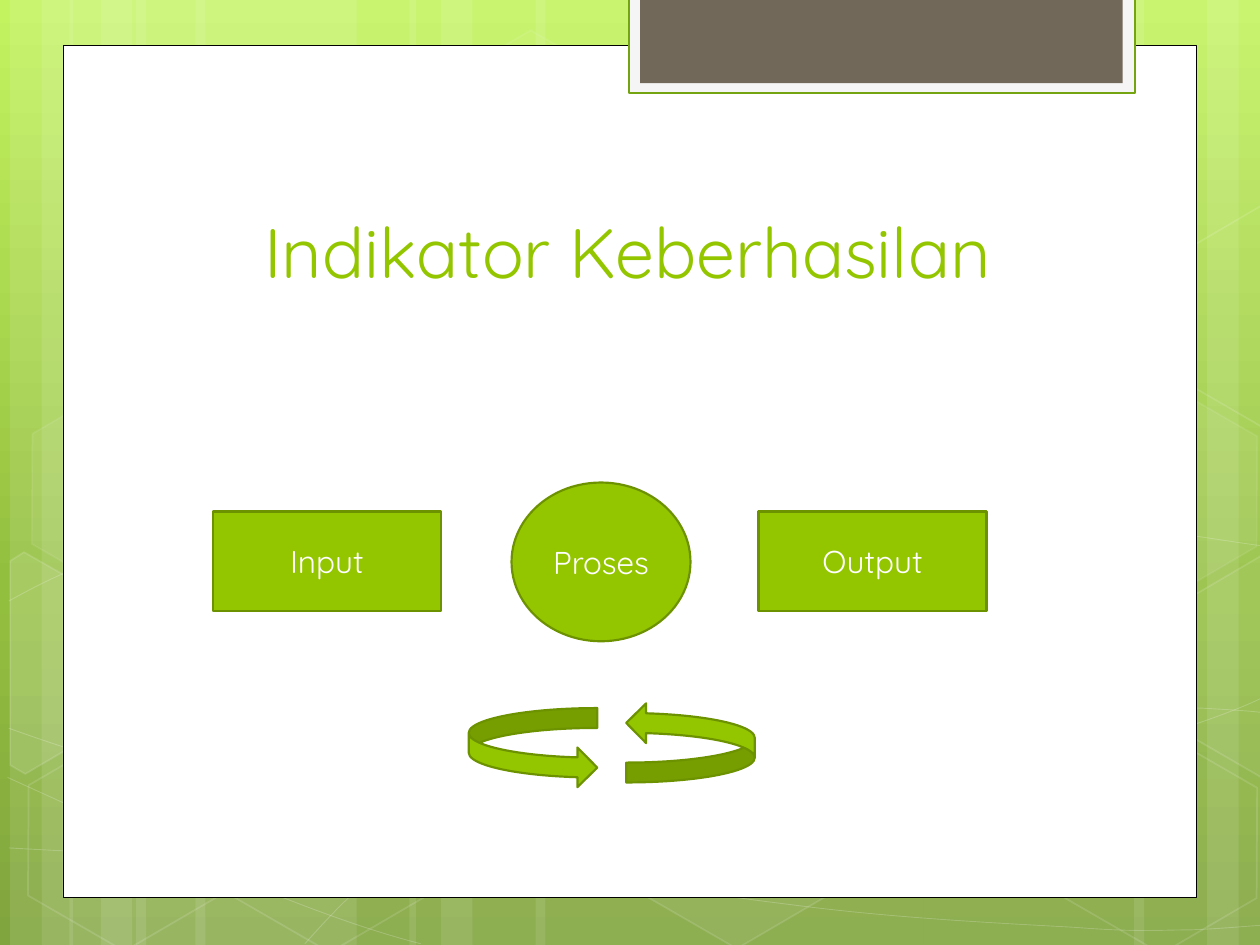
from copy import deepcopy
from dataclasses import dataclass
from math import cos, radians, sin

from lxml.etree import SubElement
from pptx import Presentation
from pptx.dml.color import RGBColor
from pptx.enum.shapes import MSO_SHAPE
from pptx.enum.text import MSO_ANCHOR, PP_ALIGN
from pptx.oxml.ns import qn
from pptx.util import Inches, Pt

COLUMNS, ROWS = 10, 7.5
FONT = "Quicksand"
WHITE, GREEN, DARK_GREEN = "FFFFFF", "94C600", "6D9200"
TILT = 30

Point = tuple[float, float]


@dataclass
class Paint:
    """Fill and outline; opacities are percentages."""
    fill: str | None = None
    fill_opacity: int = 100
    line: str | None = None
    line_width: float = 1
    line_opacity: int = 100


@dataclass
class Figure:
    """A preset shape placed in grid columns and rows."""
    kind: MSO_SHAPE
    left: float
    top: float
    width: float
    height: float
    paint: Paint
    text: str = ""
    rotation: float = 0
    adjustments: tuple[float, ...] = ()


@dataclass
class Curve:
    """A start and three points per cubic; the knot at line_end ends a straight part."""
    knots: list[Point]
    line_end: int = 0


@dataclass
class CutHexagon:
    """A tilted hexagon clipped by the slide's edge, with corners as they appear."""
    center: Point
    corners: list[Point]
    paint: Paint


deck = Presentation()
deck.slide_width, deck.slide_height = Inches(10), Inches(7.5)
page = deck.slides.add_slide(deck.slide_layouts[5])


def column(count: float) -> int:
    return round(deck.slide_width * count / COLUMNS)


def row(count: float) -> int:
    return round(deck.slide_height * count / ROWS)


def set_colour(fill, colour: str, opacity: int = 100) -> None:
    fill.solid()
    fill.fore_color.rgb = RGBColor.from_string(colour)
    if opacity < 100:
        element = fill._xPr.find(qn("a:solidFill"))[0]
        SubElement(element, qn("a:alpha"), val=str(opacity * 1000))


def apply_paint(shape, paint: Paint) -> None:
    shape.shadow.inherit = False
    if paint.fill:
        set_colour(shape.fill, paint.fill, paint.fill_opacity)
    else:
        shape.fill.background()
    if paint.line:
        shape.line.width = Pt(paint.line_width)
        set_colour(shape.line.fill, paint.line, paint.line_opacity)
    else:
        shape.line.fill.background()


def write(shape, text: str, size: float, colour: str, anchor: MSO_ANCHOR) -> None:
    frame = shape.text_frame
    frame.text = text
    frame.word_wrap = True
    frame.vertical_anchor = anchor
    para = frame.paragraphs[0]
    para.alignment = PP_ALIGN.CENTER
    font = para.runs[0].font
    font.name, font.size = FONT, Pt(size)
    font.color.rgb = RGBColor.from_string(colour)


def draw_figure(figure: Figure) -> None:
    shape = page.shapes.add_shape(
        figure.kind, column(figure.left), row(figure.top),
        column(figure.width), row(figure.height))
    shape.rotation = figure.rotation
    for index, value in enumerate(figure.adjustments):
        shape.adjustments[index] = value
    apply_paint(shape, figure.paint)
    if figure.text:
        write(shape, figure.text, 18, WHITE, MSO_ANCHOR.MIDDLE)


def draw_outline(points: list[Point], paint: Paint, close: bool):
    start, *others = [(column(x), row(y)) for x, y in points]
    builder = page.shapes.build_freeform(*start)
    builder.add_line_segments(others, close=close)
    shape = builder.convert_to_shape()
    apply_paint(shape, paint)
    return shape


def draw_curve(curve: Curve) -> None:
    shape = draw_outline(curve.knots, Paint(line=WHITE, line_width=0.5, line_opacity=20), False)
    segments = list(shape._element.iter(qn("a:lnTo")))
    if curve.line_end:
        del segments[curve.line_end - 1]
    for first in range(0, len(segments), 3):
        cubic, *rest = segments[first:first + 3]
        cubic.tag = qn("a:cubicBezTo")
        for segment in rest:
            cubic.append(segment[0])
            segment.getparent().remove(segment)


def draw_cut_hexagon(cut: CutHexagon) -> None:
    center_x, center_y = cut.center
    cosine, sine = cos(radians(TILT)), sin(radians(TILT))
    upright = [
        (center_x + (x - center_x) * cosine + (y - center_y) * sine,
         center_y - (x - center_x) * sine + (y - center_y) * cosine)
        for x, y in cut.corners]
    draw_outline(upright, cut.paint, True).rotation = TILT


def draw_background() -> None:
    fill = page.background.fill
    fill.gradient()
    fill.gradient_angle = 270
    stops = next(page._element.iter(qn("a:gsLst")))
    stops.insert(1, deepcopy(stops[0]))
    for stop, position, colour in zip(
            fill.gradient_stops, (0, 0.62, 1), ("C3F35F", "93BF3F", "81A53E")):
        stop.position = position
        stop.color.rgb = RGBColor.from_string(colour)


def glass(fill_opacity: int, line_opacity: int) -> Paint:
    return Paint(WHITE if fill_opacity else None, fill_opacity, WHITE, 1, line_opacity)


LEFT_BANDS = [(1.08, 1.75, 0), (0.08, 0.5, 0), (0.33, 0.83, 0)]
BANDS = [
    *LEFT_BANDS,
    *[(left + 0.47, width, turn) for left, width, turn in LEFT_BANDS],
    (7.33, 1.75, 180), (9.58, 0.5, 180), (9, 0.83, 180),
    (4.25, 3.08, 0), (3.25, 0.5, 0), (3.5, 0.83, 0),
]
CURVES = [
    Curve([(0.07, 6.73), (0.61, 6.76), (1.15, 6.79), (1.9, 6.78), (2.65, 6.77), (3.58, 6.75),
           (4.58, 6.65), (5.58, 6.55), (7, 6.36), (7.92, 6.17), (8.83, 5.98), (9.77, 5.68),
           (10.07, 5.51)]),
    Curve([(0.07, 4.77), (0.36, 4.61), (0.65, 4.46), (1.21, 4.31), (1.78, 4.16), (2.59, 3.94),
           (3.47, 3.87), (4.36, 3.8), (5.44, 3.79), (6.54, 3.87), (7.64, 3.95), (9.47, 4.26),
           (10.07, 4.34)]),
    Curve([(0.06, 6.17), (1.27, 6.72), (2.47, 7.27), (3.34, 7.49)]),
    Curve([(0.07, 5.78), (0.38, 5.89), (0.7, 6), (1.28, 6.16), (1.86, 6.31), (2.73, 6.56),
           (3.57, 6.73), (4.4, 6.9), (5.45, 7.08), (6.28, 7.18), (7.11, 7.29), (8, 7.33),
           (8.53, 7.36), (9.05, 7.4), (9.19, 7.38), (9.45, 7.38), (9.71, 7.37), (9.89, 7.35),
           (10.07, 7.34)]),
    Curve([(2.42, 7.49), (2.6, 7.29), (2.78, 7.09), (3.02, 6.91), (3.26, 6.73), (3.6, 6.53),
           (3.88, 6.39), (4.16, 6.25), (4.33, 6.19), (4.7, 6.09), (5.06, 5.99), (5.73, 5.85),
           (6.08, 5.78), (6.44, 5.71), (6.49, 5.71), (6.8, 5.69), (7.11, 5.66), (7.6, 5.63),
           (7.94, 5.62), (8.29, 5.61), (8.86, 5.62), (8.86, 5.62), (9.53, 5.62), (9.71, 5.63),
           (9.88, 5.64), (9.97, 5.65), (10.06, 5.66), (10.03, 5.65), (10.06, 5.66)], 22),
]
HEXAGONS = [
    (3.34, 0.36, glass(4, 8)), (4.97, 5.89, glass(6, 12)), (0.11, 5.91, glass(0, 12)),
    (0.14, 3.12, glass(7, 8)), (1.74, 5.92, glass(0, 12)), (7.53, 4.53, glass(10, 12)),
    (8.34, 5.93, glass(0, 12)), (8.34, 3.14, glass(7, 8)),
]
RIGHT_CUT = [(9.26, 4.85), (10.01, 4.41), (10.09, 4.46), (10.09, 6.13), (10.02, 6.17),
             (9.26, 5.73)]
CUT_HEXAGONS = [
    CutHexagon((0.36, 5.35), [(0.08, 4.45), (0.19, 4.38), (0.96, 4.82), (0.95, 5.7),
                              (0.2, 6.14), (0.08, 6.07)], glass(10, 12)),
    CutHexagon((9.85, 5.2), RIGHT_CUT, glass(4, 12)),
    CutHexagon((9.85, 2.41), [(x, y - 2.78) for x, y in RIGHT_CUT], glass(0, 12)),
]

STAGE = Paint(GREEN, line=DARK_GREEN, line_width=1.25)
FRAME = [
    Figure(MSO_SHAPE.RECTANGLE, 0.5, 0.36, 9, 6.76, Paint(WHITE, line="000000", line_width=0.5)),
    Figure(MSO_SHAPE.RECTANGLE, 4.99, -0.02, 4.02, 0.76,
           Paint("F5F5F5", line="74A510", line_width=1.25)),
    Figure(MSO_SHAPE.RECTANGLE, 5.08, -0.02, 3.83, 0.68, Paint("71685A")),
]
PROCESS = [
    Figure(MSO_SHAPE.RECTANGLE, 1.69, 4.06, 1.81, 0.79, STAGE, "Input"),
    Figure(MSO_SHAPE.RECTANGLE, 6.02, 4.06, 1.81, 0.79, STAGE, "Output"),
    Figure(MSO_SHAPE.FLOWCHART_CONNECTOR, 4.06, 3.83, 1.42, 1.26, STAGE, "Proses"),
    Figure(MSO_SHAPE.CURVED_RIGHT_ARROW, 4.97, 5.58, 1.02, 0.63, STAGE, rotation=180),
    Figure(MSO_SHAPE.CURVED_RIGHT_ARROW, 3.72, 5.62, 1.02, 0.63, STAGE),
]

draw_background()
for left, width, turn in BANDS:
    draw_figure(Figure(MSO_SHAPE.RECTANGLE, left, 0, width, ROWS, Paint(WHITE, 10), rotation=turn))
for curve in CURVES:
    draw_curve(curve)
for left, top, paint in HEXAGONS:
    draw_figure(Figure(MSO_SHAPE.HEXAGON, left, top, 1.75, 1.52, paint,
                       rotation=TILT, adjustments=(0.285, 1.155)))
for cut in CUT_HEXAGONS:
    draw_cut_hexagon(cut)
for figure in FRAME:
    draw_figure(figure)

title = page.shapes.title
title.left, title.top, title.width, title.height = column(1.14), row(1.12), column(7.68), row(1.25)
write(title, "Indikator Keberhasilan", 40, GREEN, MSO_ANCHOR.BOTTOM)
page.shapes._spTree.append(title._element)
for figure in PROCESS:
    draw_figure(figure)

deck.save("out.pptx")
